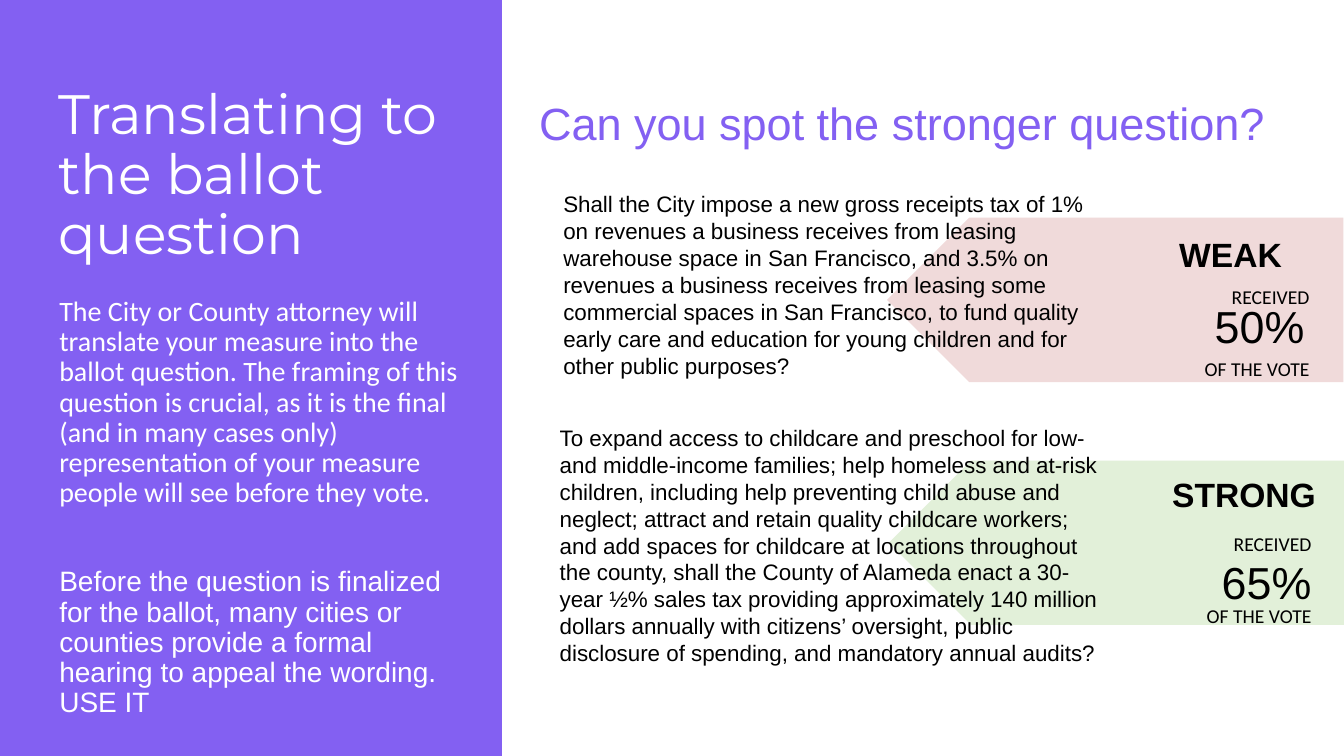
from pptx import Presentation
from pptx.dml.color import RGBColor
from pptx.enum import shapes, text
from pptx.util import Pt

PURPLE = RGBColor(0x83, 0x60, 0xF2)
WHITE = RGBColor(0xFF, 0xFF, 0xFF)
BLACK = RGBColor(0, 0, 0)
PINK = RGBColor(0xF0, 0xDA, 0xDA)
GREEN = RGBColor(0xE2, 0xF0, 0xD9)

RIGHT = {"alignment": text.PP_ALIGN.RIGHT}
TIGHT = {"line_spacing": 0.9}

ATTORNEY = (
    "The City or County attorney will translate your measure into the ballot question. "
    "The framing of this question is crucial, as it is the final (and in many cases only) "
    "representation of your measure people will see before they vote.")
HEARING = (
    "Before the question is finalized for the ballot, many cities or counties provide "
    "a formal hearing to appeal the wording. USE IT")
WEAK_QUESTION = (
    "Shall the City impose a new gross receipts tax of 1% on revenues a business receives "
    "from leasing warehouse space in San Francisco, and 3.5% on revenues a business receives "
    "from leasing some commercial spaces in San Francisco, to fund quality early care and "
    "education for young children and for other public purposes?")
STRONG_QUESTION = (
    "To expand access to childcare and preschool for low- and middle-income families; help "
    "homeless and at-risk children, including help preventing child abuse and neglect; attract "
    "and retain quality childcare workers; and add spaces for childcare at locations throughout "
    "the county, shall the County of Alameda enact a 30-year ½% sales tax providing "
    "approximately 140 million dollars annually with citizens’ oversight, public disclosure "
    "of spending, and mandatory annual audits?")


def font(name, size, color=BLACK, bold=False):
    return {"name": name, "size": Pt(size), "bold": bold, "color": color}


def set_format(target, values):
    for key, value in values.items():
        if key == "color":
            target.color.rgb = value
        else:
            setattr(target, key, value)


def add_block(slide, kind, box, color):
    """Filled shape with an outline of the same colour only where wanted."""
    shape = slide.shapes.add_shape(kind, *map(Pt, box))
    shape.shadow.inherit = False
    shape.fill.solid()
    shape.fill.fore_color.rgb = color
    shape.line.fill.background()
    return shape


def add_text(slide, box, paragraphs, anchor=text.MSO_ANCHOR.TOP):
    """Text box; each paragraph is (wording, font values, paragraph values)."""
    frame = slide.shapes.add_textbox(*map(Pt, box)).text_frame
    frame.word_wrap = True
    frame.vertical_anchor = anchor
    for index, (wording, font_values, layout) in enumerate(paragraphs):
        paragraph = frame.add_paragraph() if index else frame.paragraphs[0]
        set_format(paragraph, layout)
        run = paragraph.add_run()
        run.text = wording
        set_format(run.font, font_values)


def add_verdict(slide, color, arrow, label, label_box, vote_box, share, share_box):
    """Arrow pointing at a question, with its rating and share of the vote."""
    shape = add_block(slide, shapes.MSO_SHAPE.PENTAGON, (*arrow, 326, 117.4), color)
    shape.rotation = 180
    small = font("Calibri", 14)
    add_text(slide, label_box, [(label, font("Arial", 24, bold=True), {})])
    add_text(slide, vote_box, [
        ("RECEIVED", small, RIGHT),
        ("OF THE VOTE", small, {**RIGHT, "space_before": Pt(34.2)})])
    add_text(slide, share_box, [(share, font("Arial", 32), RIGHT)])


def main():
    presentation = Presentation()
    presentation.slide_width, presentation.slide_height = Pt(960), Pt(540)
    slide = presentation.slides.add_slide(presentation.slide_layouts[6])
    middle = text.MSO_ANCHOR.MIDDLE

    # Verdict arrows, behind the questions
    add_verdict(slide, GREEN, (635, 329), "STRONG", (830.2, 334.8, 118.8, 36),
                (825.1, 376.6, 118.8, 74.9), "65%", (859.7, 392.4, 84.2, 46))
    add_verdict(slide, PINK, (633.6, 155.5), "WEAK", (835.2, 163.4, 118.8, 36),
                (823.7, 200.2, 118.8, 74.9), "50%", (849.6, 209.5, 89.3, 46))

    # Left panel
    panel = add_block(slide, shapes.MSO_SHAPE.RECTANGLE, (-2, 0, 360, 540), PURPLE)
    panel.line.color.rgb = PURPLE
    panel.line.width = Pt(1)
    add_text(slide, (34.6, 32.4, 306, 187.2),
             [("Translating to the ballot question", font("Montserrat", 39.6, WHITE), TIGHT)],
             middle)
    add_text(slide, (35.3, 208.8, 305.3, 232.6), [
        (ATTORNEY, font("Calibri", 20, WHITE), TIGHT),
        (HEARING, font("Arial", 20, WHITE), {**TIGHT, "space_before": Pt(42)})])

    # Heading and the two questions
    add_text(slide, (378, 41, 576.7, 97.2),
             [("Can you spot the stronger question?", font("Arial", 32.2, PURPLE), TIGHT)],
             middle)
    add_text(slide, (395.3, 132.5, 403.2, 143.3), [(WEAK_QUESTION, font("Arial", 16), {})])
    add_text(slide, (392.7, 299.5, 405.4, 200.9), [(STRONG_QUESTION, font("Arial", 16), {})])

    presentation.save("out.pptx")


if __name__ == "__main__":
    main()
